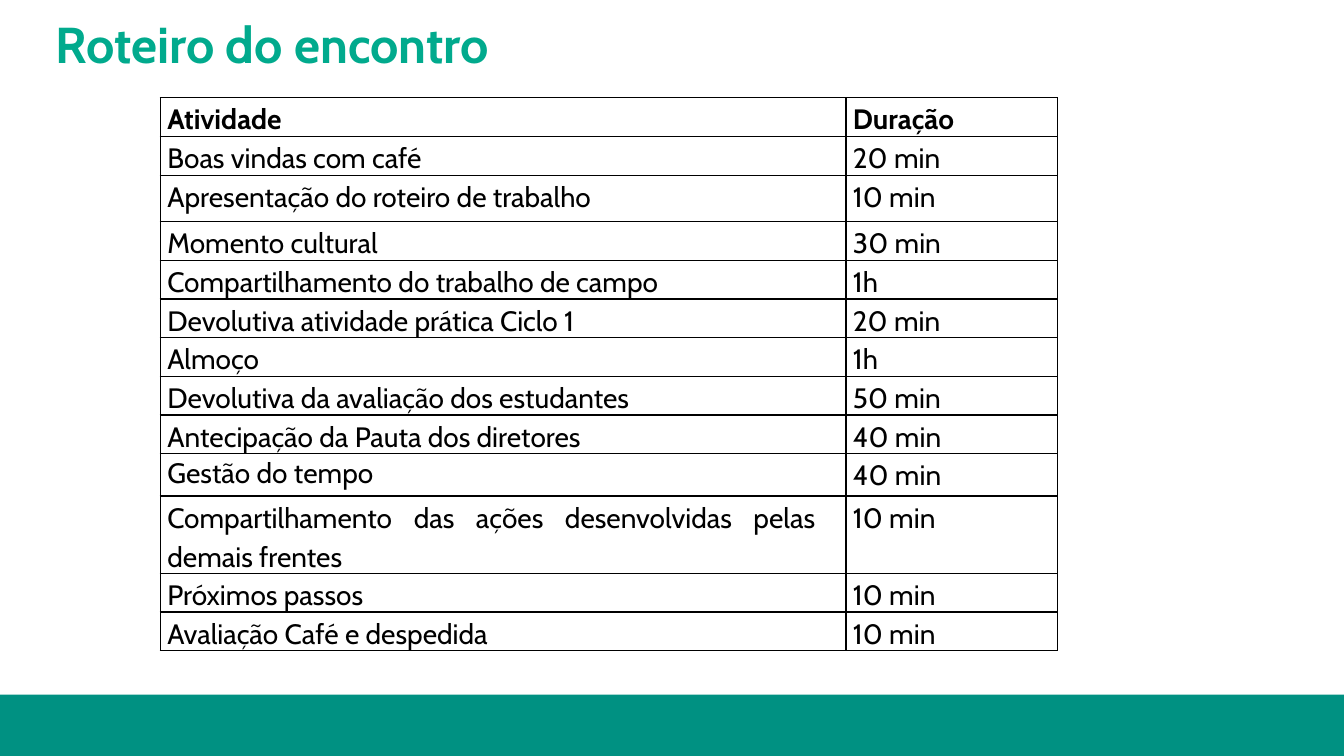
from dataclasses import dataclass
from lxml import etree
from pptx import Presentation, util as u
from pptx.dml.color import RGBColor
from pptx.enum import shapes, text
from pptx.oxml import ns

WIDE, HIGH = 13.33, 7.5
FONT = "Cabin"
ROW = 0.31


@dataclass
class Step:
    name: str
    time: str
    high: float = ROW
    lead: float = 1.15
    bold: bool = False


@dataclass
class Area:
    x: float
    y: float
    w: float
    h: float

    def put(self) -> list[int]:
        return [u.Inches(v) for v in (self.x, self.y, self.w, self.h)]


STEPS = [
    Step("Atividade", "Duração", bold=True),
    Step("Boas vindas com café", "20 min"),
    Step("Apresentação do roteiro de trabalho", "10 min", high=0.46),
    Step("Momento cultural", "30 min"),
    Step("Compartilhamento do trabalho de campo", "1h"),
    Step("Devolutiva atividade prática Ciclo 1", "20 min"),
    Step("Almoço", "1h"),
    Step("Devolutiva da avaliação dos estudantes", "50 min"),
    Step("Antecipação da Pauta dos diretores", "40 min"),
    Step("Gestão do tempo", "40 min", high=0.42, lead=1.07),
    Step("Compartilhamento das ações desenvolvidas pelas demais frentes",
         "10 min", high=0.61),
    Step("Próximos passos", "10 min"),
    Step("Avaliação Café e despedida", "10 min"),
]
COLS = [6.8, 2.1]
PADS = [0.3, 0.07]


def paint(code: str) -> RGBColor:
    return RGBColor.from_string(code)


def style(para, size: float, code: str, bold: bool) -> None:
    font = para.font
    font.name, font.size, font.bold = FONT, u.Pt(size), bold
    font.color.rgb = paint(code)


def frame(cell, code: str) -> None:
    props = cell._tc.get_or_add_tcPr()
    for side in "LRTB":
        line = etree.SubElement(props, ns.qn(f"a:ln{side}"), w=str(u.Pt(1)))
        fill = etree.SubElement(line, ns.qn("a:solidFill"))
        etree.SubElement(fill, ns.qn("a:srgbClr"), val=code)


def write(cell, words: str, lead: float, pad: float, bold: bool) -> None:
    frame(cell, "000000")
    cell.fill.background()
    cell.margin_left, cell.margin_right = u.Inches(0.07), u.Inches(pad)
    cell.margin_top = cell.margin_bottom = 0
    cell.text = words
    para = cell.text_frame.paragraphs[0]
    para.alignment = text.PP_ALIGN.JUSTIFY
    para.line_spacing = lead
    style(para, 20, "000000", bold)


def band(slide) -> None:
    top = 6.89
    area = Area(0, top, WIDE, HIGH - top)
    bar = slide.shapes.add_shape(shapes.MSO_SHAPE.RECTANGLE, *area.put())
    bar.shadow.inherit = False
    bar.fill.solid()
    bar.fill.fore_color.rgb = paint("009182")
    bar.line.fill.background()


def head(slide, words: str) -> None:
    title = slide.shapes.title
    title.left, title.top, title.width, title.height = Area(
        0.45, 0.14, 12.19, 0.65).put()
    body = title.text_frame
    body.text = words
    body.word_wrap = True
    body.auto_size = text.MSO_AUTO_SIZE.SHAPE_TO_FIT_TEXT
    body.vertical_anchor = text.MSO_ANCHOR.TOP
    para = body.paragraphs[0]
    para.alignment = text.PP_ALIGN.LEFT
    para.line_spacing = u.Pt(39)
    style(para, 36, "01AA8D", True)


def agenda(slide, steps: list[Step]) -> None:
    area = Area(1.59, 0.97, sum(COLS), sum(s.high for s in steps))
    grid = slide.shapes.add_table(len(steps), len(COLS), *area.put()).table
    grid.first_row = grid.horz_banding = False
    for col, wide in zip(grid.columns, COLS):
        col.width = u.Inches(wide)
    for row, step in zip(grid.rows, steps):
        row.height = u.Inches(step.high)
        name, time = row.cells
        write(name, step.name, step.lead, PADS[0], step.bold)
        write(time, step.time, 1.15, PADS[1], step.bold)


def main() -> None:
    deck = Presentation()
    deck.slide_width, deck.slide_height = u.Inches(WIDE), u.Inches(HIGH)
    slide = deck.slides.add_slide(deck.slide_layouts[5])
    band(slide)
    head(slide, "Roteiro do encontro")
    agenda(slide, STEPS)
    deck.save("out.pptx")


if __name__ == "__main__":
    main()
